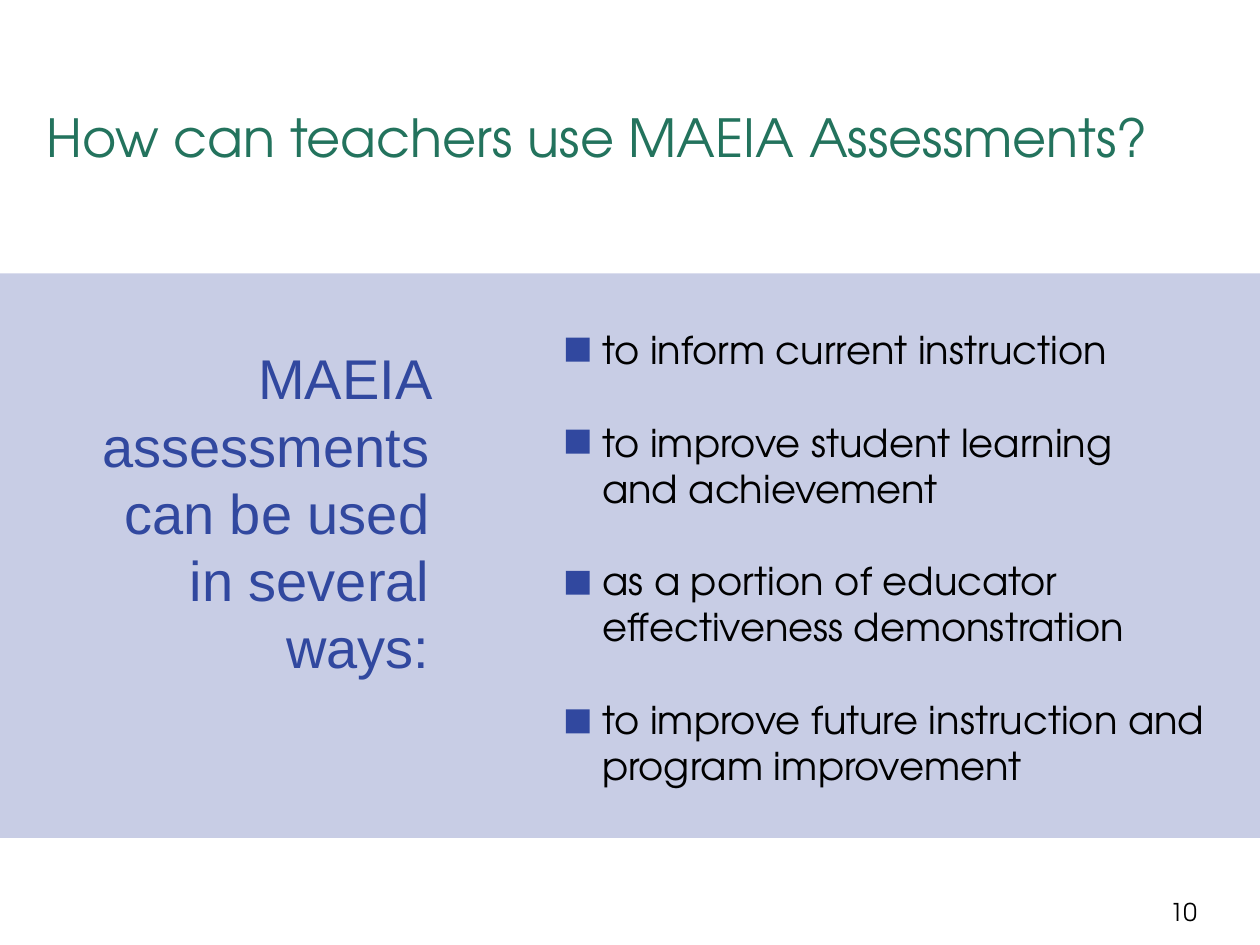
"""Build the slide on how teachers use MAEIA assessments."""
from dataclasses import dataclass

from pptx import Presentation
from pptx.dml.color import RGBColor
from pptx.enum.shapes import MSO_SHAPE
from pptx.enum.text import MSO_ANCHOR, PP_ALIGN
from pptx.slide import Slide
from pptx.util import Inches, Pt

DISPLAY_FONT = "TeX Gyre Adventor"
BLUE, GREEN, LAVENDER, BLACK = "31489F", "23735D", "C8CDE5", "000000"
MARKER_LEFT, MARKER_SIZE = 4.49, 0.19


@dataclass
class TextBlock:
    left: float
    top: float
    width: float
    height: float
    paragraphs: list[str]
    size: int
    color: str
    font: str = DISPLAY_FONT
    align: PP_ALIGN = PP_ALIGN.LEFT
    anchor: MSO_ANCHOR = MSO_ANCHOR.TOP
    inset: float = 0
    gap: float = 0
    wrap: bool = True


@dataclass
class Use:
    text: str
    marker_top: float


USES = [
    Use("to inform current instruction", 2.68),
    Use("to improve student learning \vand achievement", 3.41),
    Use("as a portion of educator\veffectiveness demonstration", 4.53),
    Use("to improve future instruction and program improvement", 5.63),
]

TEXT_BLOCKS = [
    TextBlock(9.28, 7.16, 0.22, 0.19, ["10"], 14, BLACK,
              align=PP_ALIGN.RIGHT, anchor=MSO_ANCHOR.BOTTOM, wrap=False),
    TextBlock(0.37, 0.08, 10.14, 1.25, ["How can teachers use MAEIA Assessments?"],
              30, GREEN, anchor=MSO_ANCHOR.BOTTOM),
    TextBlock(0.5, 2.68, 2.96, 3.09, ["MAEIA assessments can be used in several ways:"],
              32, BLUE, font="Arial", align=PP_ALIGN.RIGHT, inset=0.05),
    TextBlock(4.73, 2.54, 5, 3.71, [use.text for use in USES], 22, BLACK,
              inset=0.05, gap=26.4),
]


def rgb(value: str) -> RGBColor:
    """Turn a hex string into a colour."""
    return RGBColor.from_string(value)


def add_rectangle(slide: Slide, left: float, top: float, width: float,
                  height: float, color: str) -> None:
    """Draw a filled rectangle without an outline."""
    shape = slide.shapes.add_shape(MSO_SHAPE.RECTANGLE, Inches(left), Inches(top),
                                   Inches(width), Inches(height))
    shape.shadow.inherit = False
    shape.fill.solid()
    shape.fill.fore_color.rgb = rgb(color)
    shape.line.fill.background()


def add_text(slide: Slide, block: TextBlock) -> None:
    """Draw a text box with evenly spaced paragraphs."""
    shape = slide.shapes.add_textbox(Inches(block.left), Inches(block.top),
                                     Inches(block.width), Inches(block.height))
    text_frame = shape.text_frame
    text_frame.word_wrap = block.wrap
    text_frame.vertical_anchor = block.anchor
    text_frame.margin_left = text_frame.margin_right = Inches(block.inset)
    text_frame.margin_top = text_frame.margin_bottom = Inches(block.inset)
    for index, text in enumerate(block.paragraphs):
        paragraph = text_frame.add_paragraph() if index else text_frame.paragraphs[0]
        paragraph.text = text
        paragraph.alignment = block.align
        if index:
            paragraph.space_before = Pt(block.gap)
        for run in paragraph.runs:
            run.font.name = block.font
            run.font.size = Pt(block.size)
            run.font.color.rgb = rgb(block.color)


def main() -> None:
    """Build and save the presentation."""
    presentation = Presentation()
    presentation.slide_width = Inches(10)
    presentation.slide_height = Inches(7.5)
    slide = presentation.slides.add_slide(presentation.slide_layouts[6])
    add_rectangle(slide, 0, 2.17, 10, 4.48, LAVENDER)
    for block in TEXT_BLOCKS:
        add_text(slide, block)
    for use in USES:
        add_rectangle(slide, MARKER_LEFT, use.marker_top, MARKER_SIZE, MARKER_SIZE, BLUE)
    presentation.save("out.pptx")


if __name__ == "__main__":
    main()
